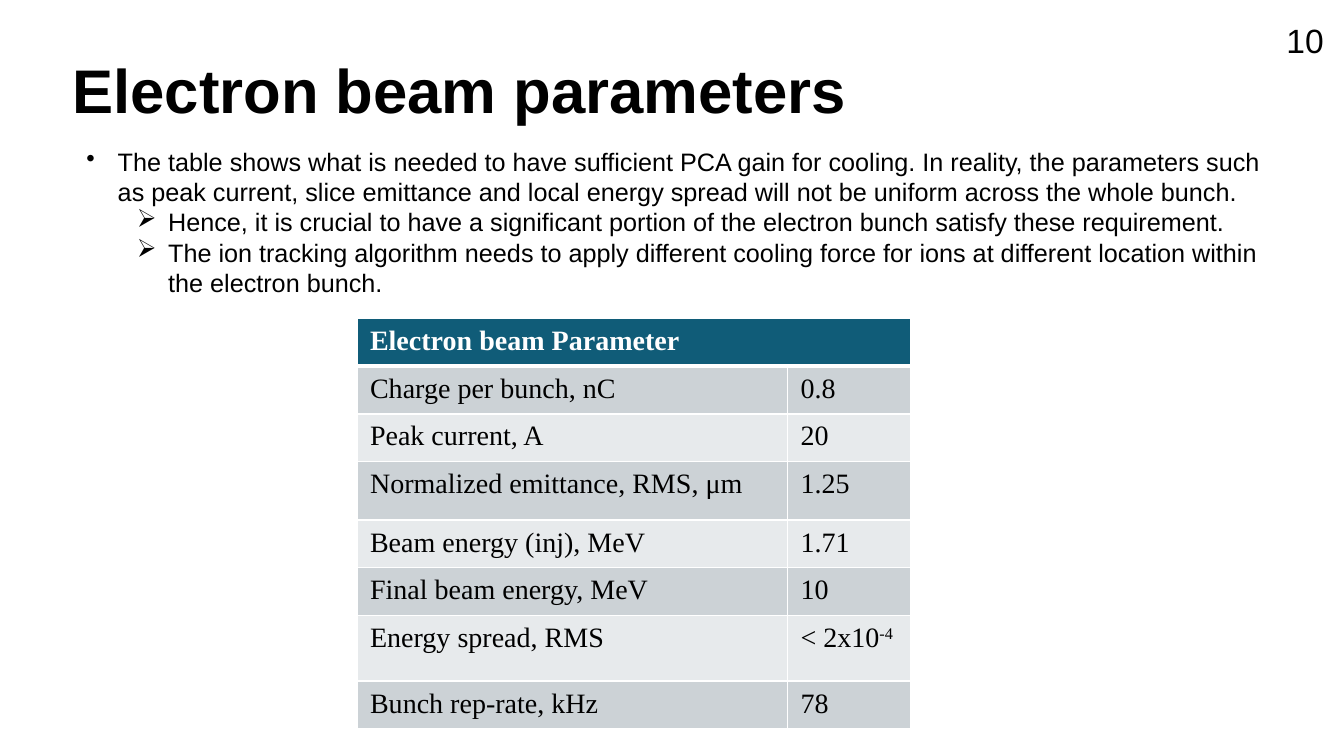
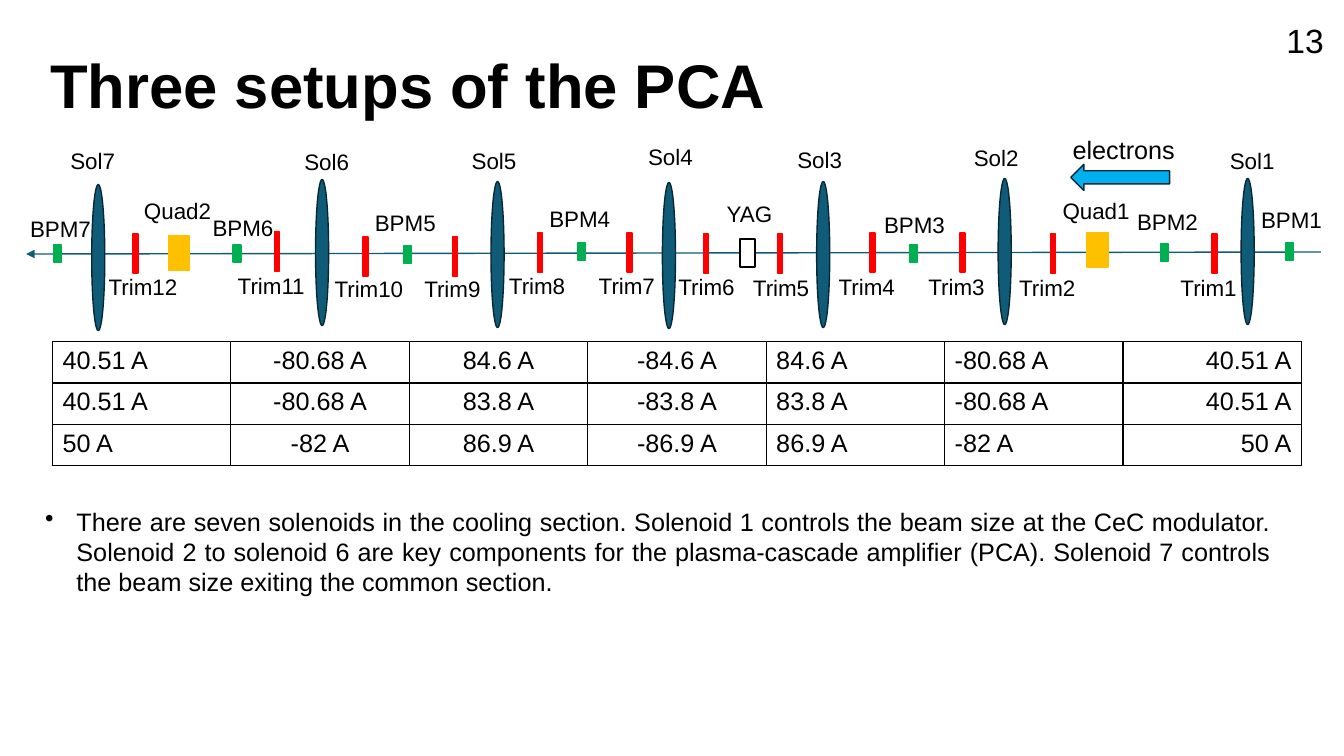
from dataclasses import dataclass

from lxml.etree import SubElement
from pptx import Presentation
from pptx.dml.color import RGBColor
from pptx.enum.shapes import MSO_CONNECTOR, MSO_SHAPE as SHAPE
from pptx.enum.text import MSO_ANCHOR as ANCHOR, PP_ALIGN as ALIGN
from pptx.oxml.ns import qn
from pptx.util import Pt

SCALE = 9144  # one px is a hundredth of an inch
BLANK_LAYOUT = 6


@dataclass(frozen=True)
class Theme:
    sans: str = "Arial"
    serif: str = "Times New Roman"
    black: str = "000000"
    white: str = "FFFFFF"
    teal: str = "105C78"
    dark_teal: str = "072835"
    band_dark: str = "CCD2D6"
    band_light: str = "E7EAEC"
    amber: str = "FFC000"
    green: str = "00B050"
    red: str = "FF0000"
    sky: str = "00B0F0"
    title_size: int = 44
    number_size: int = 24
    parameter_size: int = 20
    body_size: int = 18
    label_size: int = 16


THEME = Theme()

# Kind: preset, width, height, fill, outline
COMPONENT_STYLES = {
    "Sol": (SHAPE.OVAL, 13, 145, THEME.teal, THEME.dark_teal),
    "Quad": (SHAPE.RECTANGLE, 21, 34, THEME.amber, THEME.amber),
    "BPM": (SHAPE.RECTANGLE, 8, 17, THEME.green, THEME.green),
    "Trim": (SHAPE.RECTANGLE, 5, 39, THEME.red, THEME.red),
    "YAG": (SHAPE.RECTANGLE, 15, 28, THEME.white, THEME.black),
}

# Name, left and top of the component, left and top of its label
BEAMLINE = [
    ("Sol1", 1231, 177, 1210, 141), ("Sol2", 990, 177, 956, 138),
    ("Sol3", 810, 180, 781, 140), ("Sol4", 657, 181, 633, 137),
    ("Sol5", 487, 180, 458, 141), ("Sol6", 313, 178, 292, 142),
    ("Sol7", 91, 183, 60, 141),
    ("Quad1", 1078, 231, 1044, 191), ("Quad2", 167, 234, 133, 191),
    ("YAG", 734, 237, 711, 194),
    ("BPM1", 1275, 241, 1241, 200), ("BPM2", 1151, 242, 1118, 202),
    ("BPM3", 902, 243, 867, 205), ("BPM4", 573, 241, 535, 199),
    ("BPM5", 400, 244, 362, 203), ("BPM6", 231, 243, 201, 208),
    ("BPM7", 53, 243, 20, 209),
    ("Trim1", 1202, 232, 1161, 267), ("Trim2", 1042, 232, 1001, 267),
    ("Trim3", 952, 231, 911, 266), ("Trim4", 863, 231, 822, 266),
    ("Trim5", 771, 232, 737, 267), ("Trim6", 698, 232, 663, 266),
    ("Trim7", 622, 231, 584, 265), ("Trim8", 533, 231, 495, 265),
    ("Trim9", 449, 235, 411, 268), ("Trim10", 360, 235, 322, 268),
    ("Trim11", 272, 230, 226, 265), ("Trim12", 132, 232, 98, 266),
]

BEAM_PARAMETERS = [
    ("Electron beam Parameter", ""),
    ("Charge per bunch, nC", "0.8"),
    ("Peak current, A", "20"),
    ("Normalized emittance, RMS, μm", "1.25"),
    ("Beam energy (inj), MeV", "1.71"),
    ("Final beam energy, MeV", "10"),
    ("Energy spread, RMS", "< 2x10^-4"),
    ("Bunch rep-rate, kHz", "78"),
]

SOLENOID_CURRENTS = [
    ("40.51 A", "-80.68 A", "84.6 A", "-84.6 A", "84.6 A", "-80.68 A", "40.51 A"),
    ("40.51 A", "-80.68 A", "83.8 A", "-83.8 A", "83.8 A", "-80.68 A", "40.51 A"),
    ("50 A", "-82 A", "86.9 A", "-86.9 A", "86.9 A", "-82 A", "50 A"),
]


def px(*lengths):
    return [length * SCALE for length in lengths]


def rgb(color):
    return RGBColor.from_string(color)


class Deck:
    """Holds the theme, the presentation and the slide being drawn."""

    def __init__(self, theme):
        self.theme = theme
        self.presentation = Presentation()
        self.presentation.slide_width, self.presentation.slide_height = px(1333, 750)
        self.slide = None

    def add_slide(self, title, number, title_box):
        layout = self.presentation.slide_layouts[BLANK_LAYOUT]
        self.slide = self.presentation.slides.add_slide(layout)
        heading = self.text(title_box, title, self.theme.title_size, bold=True,
                            anchor=ANCHOR.MIDDLE)
        heading.paragraphs[0].line_spacing = 0.9
        corner = self.text((1271, 20, 47, 40), number, self.theme.number_size,
                           align=ALIGN.RIGHT, anchor=ANCHOR.MIDDLE)
        self.set_margins(corner, 0, 0, 5, 0)

    @staticmethod
    def set_margins(target, *margins):
        (target.margin_left, target.margin_top,
         target.margin_right, target.margin_bottom) = px(*margins)

    def style(self, paragraph, size, color=None, bold=False, face=None):
        font = paragraph.font
        font.name = face or self.theme.sans
        font.size = Pt(size)
        font.bold = bold
        font.color.rgb = rgb(color or self.theme.black)

    def frame(self, box, anchor=ANCHOR.TOP):
        frame = self.slide.shapes.add_textbox(*px(*box)).text_frame
        frame.word_wrap = True
        frame.vertical_anchor = anchor
        return frame

    def text(self, box, text, size, bold=False, align=ALIGN.LEFT, anchor=ANCHOR.TOP):
        frame = self.frame(box, anchor)
        paragraph = frame.paragraphs[0]
        paragraph.text = text
        paragraph.alignment = align
        self.style(paragraph, size, bold=bold)
        return frame

    def bullets(self, box, items, align=ALIGN.LEFT):
        """Draw a list of (level, text) items."""
        frame = self.frame(box)
        for index, (level, text) in enumerate(items):
            paragraph = frame.add_paragraph() if index else frame.paragraphs[0]
            paragraph.text = text
            paragraph.level = level
            paragraph.alignment = align
            margin, indent = px(31 + 50 * level, -31)
            properties = paragraph._p.get_or_add_pPr()
            properties.set("marL", str(margin))
            properties.set("indent", str(indent))
            SubElement(properties, qn("a:buChar")).set("char", "•➢"[level])
            self.style(paragraph, self.theme.body_size)

    def shape(self, preset, box, fill, outline):
        shape = self.slide.shapes.add_shape(preset, *px(*box))
        shape.shadow.inherit = False
        shape.fill.solid()
        shape.fill.fore_color.rgb = rgb(fill)
        shape.line.color.rgb = rgb(outline)
        shape.line.width = Pt(1)

    def component(self, name, left, top, label_left, label_top):
        """Draw a beamline component, styled by the kind in its name, and its label."""
        preset, width, height, fill, outline = COMPONENT_STYLES[name.rstrip("0123456789")]
        self.shape(preset, (left, top, width, height), fill, outline)
        self.text((label_left, label_top, 106, 37), name, self.theme.label_size)

    def arrow(self, start, end, color):
        connector = self.slide.shapes.add_connector(
            MSO_CONNECTOR.STRAIGHT, *px(*start, *end))
        connector.line.color.rgb = rgb(color)
        connector.line.width = Pt(1)
        properties = connector._element.spPr
        SubElement(properties.find(qn("a:ln")), qn("a:tailEnd")).set("type", "triangle")
        SubElement(properties, qn("a:effectLst"))

    def table(self, origin, columns, heights, rows, header=False):
        """Add an unfilled table frame; the caller fills its cells."""
        box = (*origin, sum(columns), sum(heights))
        table = self.slide.shapes.add_table(len(rows), len(columns), *px(*box)).table
        table.first_row = header
        table.horz_banding = False
        for column, width in zip(table.columns, px(*columns)):
            column.width = width
        for row, height in zip(table.rows, px(*heights)):
            row.height = height
        return table

    def cell(self, cell, text, size, fill, border, align=ALIGN.LEFT, bottom=1, **font):
        """Fill a cell; text after a caret is set as a superscript."""
        properties = cell._tc.get_or_add_tcPr()
        for side, width in zip("LRTB", (1, 1, 1, bottom)):
            line = SubElement(properties, qn(f"a:ln{side}"), w=str(Pt(width)))
            solid = SubElement(line, qn("a:solidFill"))
            SubElement(solid, qn("a:srgbClr"), val=border)
        cell.fill.solid()
        cell.fill.fore_color.rgb = rgb(fill)
        base, _, exponent = text.partition("^")
        paragraph = cell.text_frame.paragraphs[0]
        paragraph.text = base
        paragraph.alignment = align
        self.style(paragraph, size, **font)
        if exponent:
            run = paragraph.add_run()
            run.text = exponent
            run._r.get_or_add_rPr().set("baseline", "30000")

    def parameter_table(self, origin, columns, heights, rows):
        theme = self.theme
        table = self.table(origin, columns, heights, rows, header=True)
        table.cell(0, 0).merge(table.cell(0, 1))
        for row, values in enumerate(rows):
            header = row == 0
            band = theme.band_dark if row % 2 else theme.band_light
            for column, value in enumerate(values):
                cell = table.cell(row, column)
                self.set_margins(cell, 13, 7, 13, 7)
                self.cell(cell, value, theme.parameter_size,
                          theme.teal if header else band, theme.white,
                          bottom=3 if header else 1, bold=header, face=theme.serif,
                          color=theme.white if header else theme.black)

    def current_table(self, origin, columns, heights, rows, alignments):
        table = self.table(origin, columns, heights, rows)
        for row, values in enumerate(rows):
            for column, (value, align) in enumerate(zip(values, alignments)):
                self.cell(table.cell(row, column), value, self.theme.body_size,
                          self.theme.white, self.theme.black, align)


def add_parameters_slide(deck):
    deck.add_slide("Electron beam parameters", "10", (62, 20, 1208, 145))
    deck.parameter_table((354, 316), (427, 122), (43, 44, 44, 58, 44, 44, 65, 44),
                         BEAM_PARAMETERS)
    deck.bullets((76, 140, 1186, 162), [
        (0, "The table shows what is needed to have sufficient PCA gain for cooling. "
            "In reality, the parameters such as peak current, slice emittance and local "
            "energy spread will not be uniform across the whole bunch."),
        (1, "Hence, it is crucial to have a significant portion of the electron bunch "
            "satisfy these requirement."),
        (1, "The ion tracking algorithm needs to apply different cooling force for ions "
            "at different location within the electron bunch."),
    ])


def add_setups_slide(deck):
    theme = deck.theme
    deck.add_slide("Three setups of the PCA", "13", (40, 15, 1297, 145))
    deck.arrow((1310, 250), (26, 252), theme.teal)
    for component in BEAMLINE:
        deck.component(*component)
    deck.shape(SHAPE.LEFT_ARROW, (1062, 163, 98, 26), theme.sky, theme.dark_teal)
    deck.text((1054, 128, 174, 40), "electrons", theme.body_size)
    alignments = [ALIGN.LEFT, *[ALIGN.CENTER] * 3, *[ALIGN.LEFT] * 2, ALIGN.RIGHT]
    deck.current_table((52, 339), [177] * 7, [41] * 3, SOLENOID_CURRENTS, alignments)
    deck.bullets((35, 497, 1235, 101), [
        (0, "There are seven solenoids in the cooling section. Solenoid 1 controls the "
            "beam size at the CeC modulator. Solenoid 2 to solenoid 6 are key components "
            "for the plasma-cascade amplifier (PCA). Solenoid 7 controls the beam size "
            "exiting the common section."),
    ], ALIGN.JUSTIFY)


def main():
    deck = Deck(THEME)
    add_parameters_slide(deck)
    add_setups_slide(deck)
    deck.presentation.save("out.pptx")


if __name__ == "__main__":
    main()
